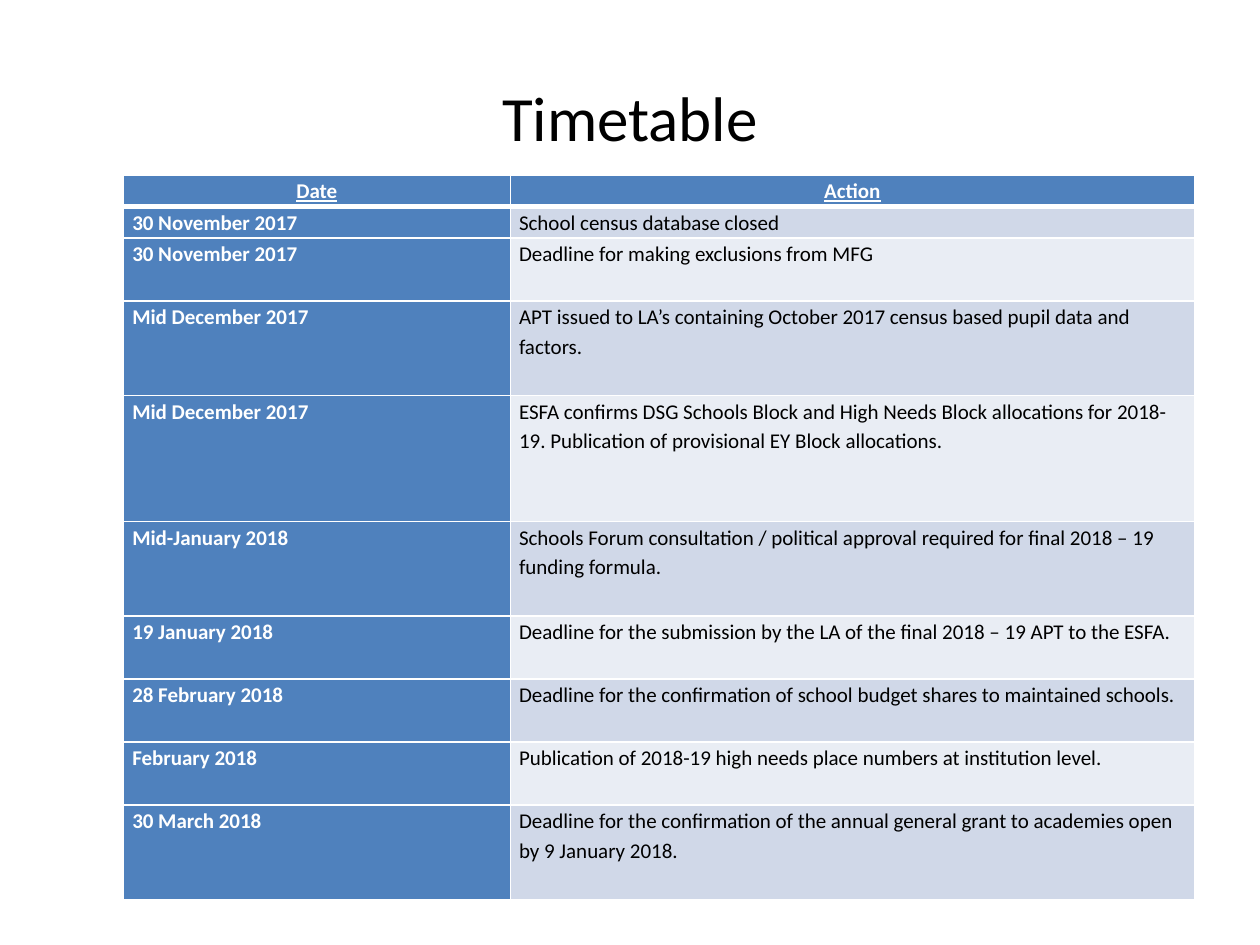
from lxml import etree
from pptx import Presentation
from pptx.dml.color import RGBColor
from pptx.enum.text import MSO_ANCHOR, PP_ALIGN
from pptx.oxml.ns import qn
from pptx.util import Inches, Pt

CENTER, LEFT = PP_ALIGN.CENTER, PP_ALIGN.LEFT
MIDDLE = MSO_ANCHOR.MIDDLE

COLORS = {"ink": "000000", "white": "FFFFFF", "blue": "4F81BD",
          "band": "D0D8E8", "pale": "E9EDF4"}

WIDTHS = [3.07, 5.43]
ROWS = [
    (0.25, "Date", "Action"),
    (0.25, "30 November 2017", "School census database closed"),
    (0.5, "30 November 2017", "Deadline for making exclusions from MFG"),
    (0.75, "Mid December 2017",
     "APT issued to LA’s containing October 2017 census based pupil data and factors."),
    (1, "Mid December 2017",
     "ESFA confirms DSG Schools Block and High Needs Block allocations for 2018-19. "
     "Publication of provisional EY Block allocations."),
    (0.75, "Mid-January 2018",
     "Schools Forum consultation / political approval required for final 2018 – 19 "
     "funding formula."),
    (0.5, "19 January 2018",
     "Deadline for the submission by the LA of the final 2018 – 19 APT to the ESFA."),
    (0.5, "28 February 2018",
     "Deadline for the confirmation of school budget shares to maintained schools."),
    (0.5, "February 2018",
     "Publication of 2018-19 high needs place numbers at institution level."),
    (0.75, "30 March 2018",
     "Deadline for the confirmation of the annual general grant to academies open "
     "by 9 January 2018."),
]


class Deck:
    font = "Calibri"

    def __init__(self, slide):
        self.slide = slide

    def label(self, frame, text, size, color, align, bold=False, under=False):
        frame.text = text
        para = frame.paragraphs[0]
        para.alignment = align
        font = para.font
        font.name, font.size = self.font, Pt(size)
        font.bold, font.underline = bold, under
        font.color.rgb = RGBColor.from_string(COLORS[color])
        return para

    def title(self, text, left, top, width, height):
        box = self.slide.shapes.add_textbox(
            Inches(left), Inches(top), Inches(width), Inches(height))
        frame = box.text_frame
        frame.word_wrap = True
        frame.vertical_anchor = MIDDLE
        self.label(frame, text, 36, "ink", CENTER)

    def border(self, cell, side, width):
        props = cell._tc.get_or_add_tcPr()
        line = etree.SubElement(props, qn("a:ln" + side), w=str(Pt(width)))
        fill = etree.SubElement(line, qn("a:solidFill"))
        etree.SubElement(fill, qn("a:srgbClr"), val=COLORS["white"])

    def cell(self, cell, text, row, col):
        head = row == 0
        strong = head or col == 0
        cell.margin_left = cell.margin_right = Inches(0.07)
        cell.margin_top = cell.margin_bottom = 0
        para = self.label(cell.text_frame, text, 12,
                          "white" if strong else "ink",
                          CENTER if head else LEFT, strong, head)
        para.line_spacing = 1.15
        for side in "LRTB":
            thick = (row, side) in ((0, "B"), (1, "T"))
            self.border(cell, side, 3 if thick else 1)
        tint = "blue" if strong else "band" if row % 2 else "pale"
        cell.fill.solid()
        cell.fill.fore_color.rgb = RGBColor.from_string(COLORS[tint])

    def table(self, rows, widths, left, top):
        height = sum(row[0] for row in rows)
        table = self.slide.shapes.add_table(
            len(rows), len(widths), Inches(left), Inches(top),
            Inches(sum(widths)), Inches(height)).table
        for col, width in enumerate(widths):
            table.columns[col].width = Inches(width)
        for row, (tall, *texts) in enumerate(rows):
            table.rows[row].height = Inches(tall)
            for col, text in enumerate(texts):
                self.cell(table.cell(row, col), text, row, col)


def main():
    show = Presentation()
    show.slide_width, show.slide_height = Inches(10), Inches(7.5)
    deck = Deck(show.slides.add_slide(show.slide_layouts[6]))
    deck.title("Timetable", 0.5, 0.3, 9, 1.25)
    deck.table(ROWS, WIDTHS, 0.98, 1.39)
    show.save("out.pptx")


if __name__ == "__main__":
    main()
